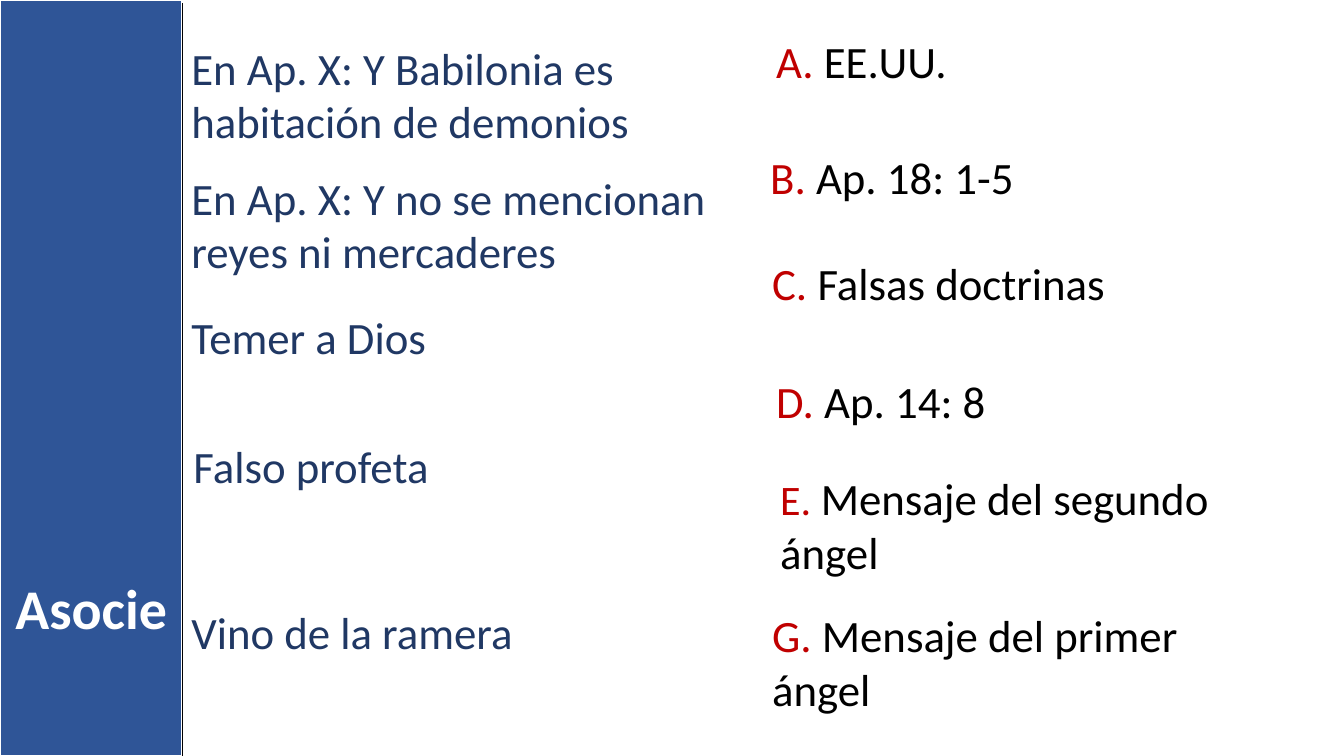
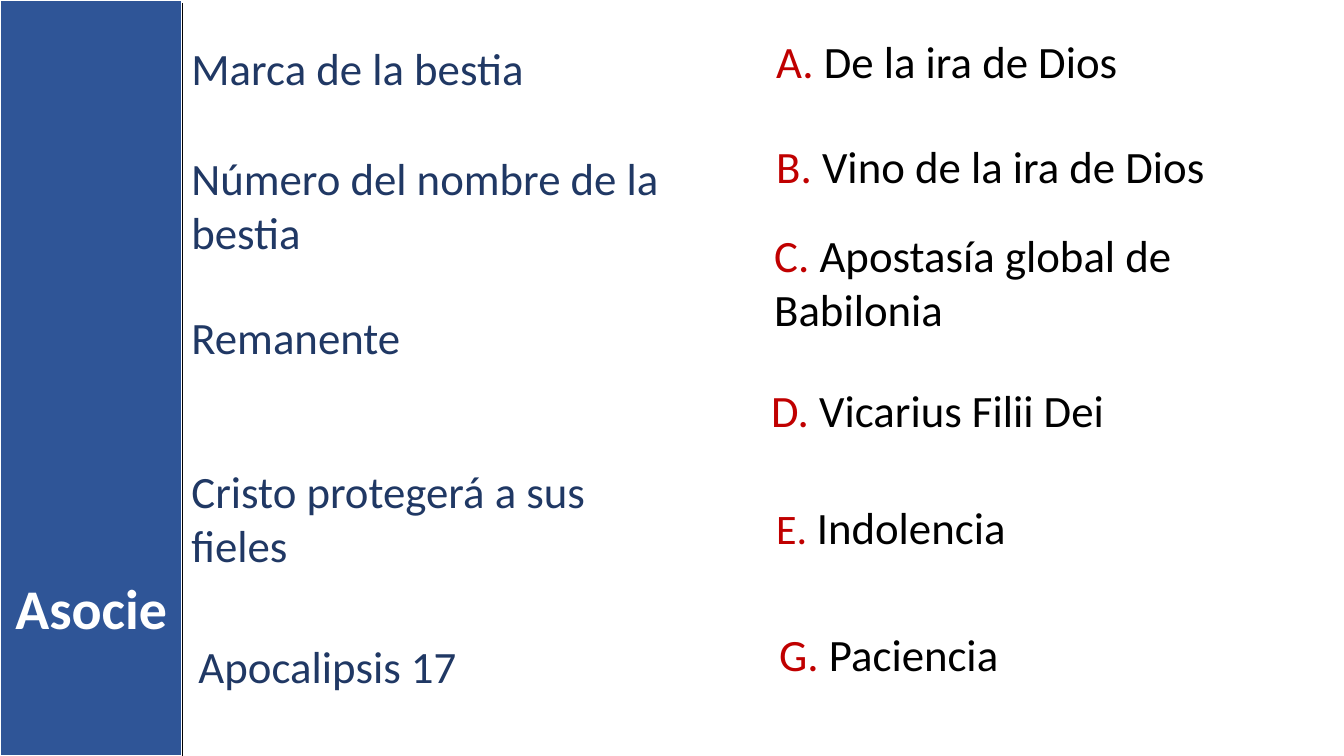
from dataclasses import dataclass

from lxml import etree
from pptx import Presentation
from pptx.dml.color import RGBColor
from pptx.enum.shapes import MSO_CONNECTOR, MSO_SHAPE
from pptx.enum.text import MSO_ANCHOR, MSO_AUTO_SIZE, PP_ALIGN
from pptx.oxml.ns import qn
from pptx.slide import Slide
from pptx.text.text import TextFrame, _Paragraph
from pptx.util import Inches, Pt

RECTANGLE = MSO_SHAPE.RECTANGLE
STRAIGHT = MSO_CONNECTOR.STRAIGHT
TOP = MSO_ANCHOR.TOP
GROW = MSO_AUTO_SIZE.SHAPE_TO_FIT_TEXT
CENTER = PP_ALIGN.CENTER
TITLE_ONLY = 5


@dataclass(frozen=True)
class Theme:
    font: str = "Calibri"
    band: RGBColor = RGBColor(0x2F, 0x55, 0x97)
    prompt: RGBColor = RGBColor(0x20, 0x38, 0x64)
    letter: RGBColor = RGBColor(0xC0, 0x00, 0x00)
    answer: RGBColor = RGBColor(0x00, 0x00, 0x00)
    white: RGBColor = RGBColor(0xFF, 0xFF, 0xFF)
    title_size: int = 40
    text_size: int = 32
    small_letter_size: int = 30


@dataclass(frozen=True)
class Entry:
    text: str
    left: float
    top: float
    width: float
    lines: int = 1
    letter: str = ""


@dataclass(frozen=True)
class Exercise:
    title: str
    prompts: tuple[Entry, ...]
    answers: tuple[Entry, ...]


THEME = Theme()
SLIDE_WIDTH, SLIDE_HEIGHT = 13.33, 7.5
BAND_WIDTH = 1.81
ONE_LINE, EXTRA_LINE = 0.64, 0.54

EXERCISES = (
    Exercise(
        "Asocie",
        (
            Entry("En Ap. X: Y Babilonia es habitación de demonios", 1.8, 0.35, 4.57, 2),
            Entry("En Ap. X: Y no se mencionan reyes ni mercaderes", 1.8, 1.64, 5.36, 2),
            Entry("Temer a Dios", 1.8, 3.02, 5.16),
            Entry("Falso profeta", 1.82, 4.3, 5.01),
            Entry("Vino de la ramera", 1.8, 5.95, 4.41),
        ),
        (
            Entry("EE.UU.", 7.6, 0.29, 5.58, letter="A"),
            Entry("Ap. 18: 1-5", 7.54, 1.44, 5.49, letter="B"),
            Entry("Falsas doctrinas", 7.56, 2.49, 5.27, letter="C"),
            Entry("Ap. 14: 8", 7.6, 3.66, 5.58, letter="D"),
            Entry("Mensaje del segundo ángel", 7.64, 4.62, 5.49, 2, "E"),
            Entry("Mensaje del primer ángel", 7.56, 5.98, 5.2, 2, "G"),
        ),
    ),
    Exercise(
        "Asocie",
        (
            Entry("Marca de la bestia", 1.8, 0.35, 4.57),
            Entry("Número del nombre de la bestia", 1.8, 1.45, 5.36, 2),
            Entry("Remanente", 1.8, 3.02, 5.16),
            Entry("Cristo protegerá a sus fieles", 1.8, 4.55, 5.01, 2),
            Entry("Apocalipsis 17", 1.87, 6.29, 4.41),
        ),
        (
            Entry("De la ira de Dios", 7.6, 0.29, 5.58, letter="A"),
            Entry("Vino de la ira de Dios", 7.6, 1.33, 5.49, letter="B"),
            Entry("Apostasía global de Babilonia", 7.58, 2.21, 5.52, 2, "C"),
            Entry("Vicarius Filii Dei", 7.55, 3.75, 5.58, letter="D"),
            Entry("Indolencia", 7.6, 4.91, 5.49, letter="E"),
            Entry("Paciencia", 7.63, 6.17, 5.2, letter="G"),
        ),
    ),
)


def add_run(paragraph: _Paragraph, text: str, color: RGBColor,
            size: int = THEME.text_size, bold: bool = False) -> None:
    run = paragraph.add_run()
    run.text = text
    run.font.name = THEME.font
    run.font.size = Pt(size)
    run.font.bold = bold
    run.font.color.rgb = color


def set_up_frame(frame: TextFrame) -> _Paragraph:
    frame.word_wrap = True
    frame.auto_size = GROW
    frame.vertical_anchor = TOP
    return frame.paragraphs[0]


def add_band_and_title(slide: Slide, text: str) -> None:
    band = slide.shapes.add_shape(
        RECTANGLE, 0, 0, Inches(BAND_WIDTH), Inches(SLIDE_HEIGHT))
    band.shadow.inherit = False
    band.fill.solid()
    band.fill.fore_color.rgb = THEME.band
    band.line.color.rgb = THEME.white
    band.line.width = Pt(1.5)

    title = slide.shapes.title
    title.element.addprevious(band.element)
    title.left, title.top = Inches(0), Inches(5.64)
    title.width, title.height = Inches(BAND_WIDTH), Inches(0.77)
    paragraph = set_up_frame(title.text_frame)
    paragraph.alignment = CENTER
    add_run(paragraph, text, THEME.white, THEME.title_size, True)


def add_band_edge(slide: Slide) -> None:
    edge = slide.shapes.add_connector(
        STRAIGHT, Inches(BAND_WIDTH), Inches(0.03),
        Inches(BAND_WIDTH), Inches(SLIDE_HEIGHT))
    edge.line.color.rgb = THEME.answer
    edge.line.width = Pt(1)
    etree.SubElement(edge.element.spPr, qn("a:effectLst"))


def add_entry(slide: Slide, entry: Entry) -> None:
    height = ONE_LINE + EXTRA_LINE * (entry.lines - 1)
    box = slide.shapes.add_textbox(
        Inches(entry.left), Inches(entry.top), Inches(entry.width), Inches(height))
    paragraph = set_up_frame(box.text_frame)
    if entry.letter:
        size = THEME.small_letter_size if entry.letter == "E" else THEME.text_size
        add_run(paragraph, f"{entry.letter}. ", THEME.letter, size)
    add_run(paragraph, entry.text, THEME.answer if entry.letter else THEME.prompt)


def main() -> None:
    deck = Presentation()
    deck.slide_width = Inches(SLIDE_WIDTH)
    deck.slide_height = Inches(SLIDE_HEIGHT)
    for exercise in EXERCISES:
        slide = deck.slides.add_slide(deck.slide_layouts[TITLE_ONLY])
        add_band_and_title(slide, exercise.title)
        for entry in exercise.prompts + exercise.answers:
            add_entry(slide, entry)
        add_band_edge(slide)
    deck.save("out.pptx")


if __name__ == "__main__":
    main()
